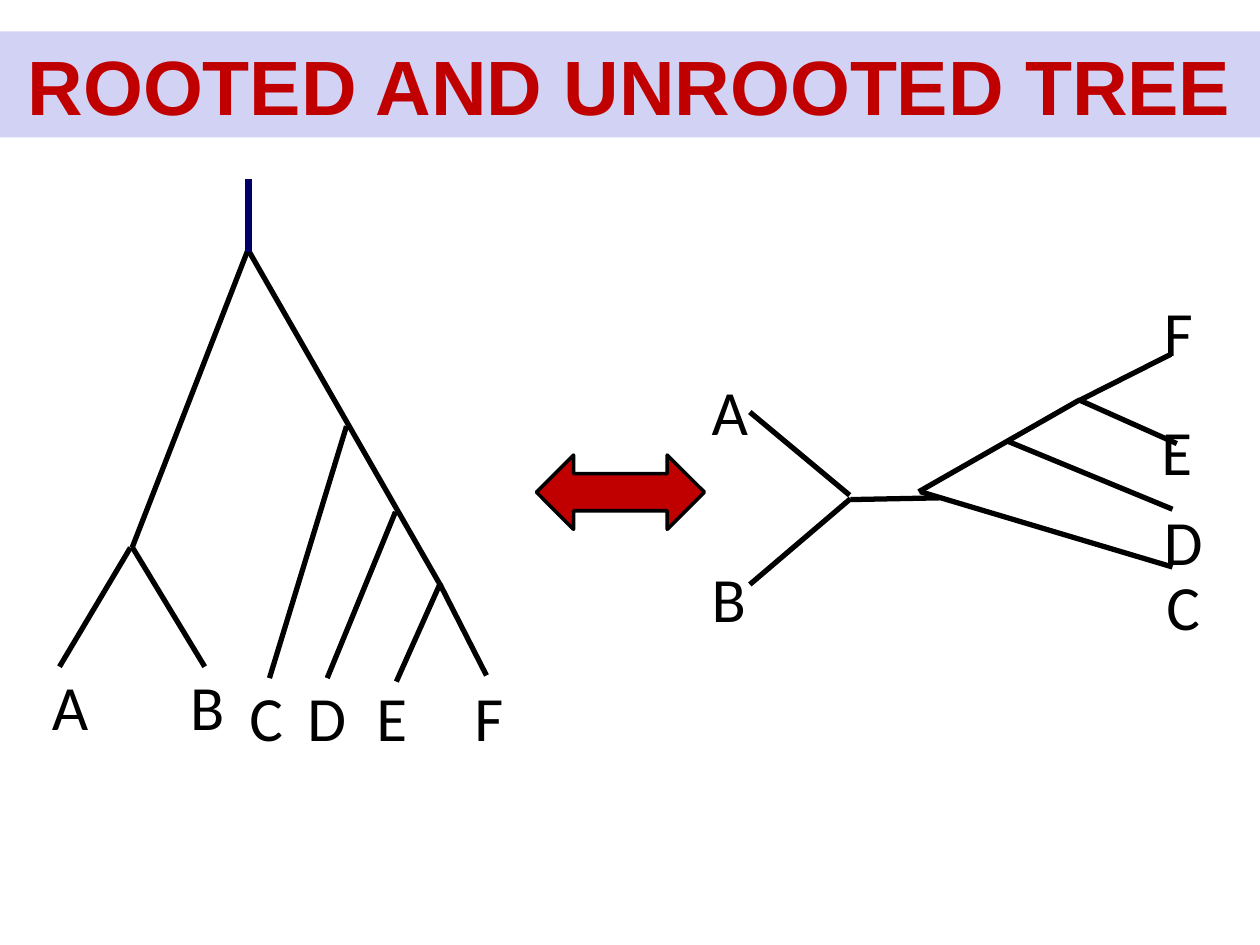
from lxml import etree
from pptx import Presentation
from pptx.dml.color import RGBColor
from pptx.enum.shapes import MSO_CONNECTOR, MSO_SHAPE
from pptx.enum.text import MSO_ANCHOR, PP_ALIGN
from pptx.oxml.ns import qn
from pptx.util import Pt

STRAIGHT = MSO_CONNECTOR.STRAIGHT
RECTANGLE = MSO_SHAPE.RECTANGLE
DOUBLE_ARROW = MSO_SHAPE.LEFT_RIGHT_ARROW
CENTER = PP_ALIGN.CENTER
MIDDLE = MSO_ANCHOR.MIDDLE

BLACK = RGBColor(0x00, 0x00, 0x00)
RED = RGBColor(0xC0, 0x00, 0x00)
LAVENDER = RGBColor(0xD2, 0xD2, 0xF4)
NAVY = RGBColor(0x00, 0x00, 0x66)

TITLE_FORMAT = {"name": "Arial", "size": Pt(44), "bold": True}
TAXON_FORMAT = {"name": "Calibri", "size": Pt(36), "bold": False}


def add_branch(start, end, color=BLACK, width=3):
    branch = slide.shapes.add_connector(STRAIGHT, *map(Pt, start + end))
    branch.line.color.rgb = color
    branch.line.width = Pt(width)
    etree.SubElement(branch._element.spPr, qn("a:effectLst"))


def write(paragraph, text, color, font_format):
    run = paragraph.add_run()
    run.text = text
    run.font.color.rgb = color
    for attribute, value in font_format.items():
        setattr(run.font, attribute, value)


prs = Presentation()
prs.slide_width, prs.slide_height = Pt(720), Pt(540)
slide = prs.slides.add_slide(prs.slide_layouts[6])

# Branches of the rooted tree, then of the unrooted tree
rooted_branches = [
    ((34, 381), (74.5, 313)),
    ((75.5, 312.5), (117, 381)),
    ((142, 142), (75.5, 313)),
    ((142.5, 144), (252, 335)),
    ((198, 243.5), (154, 387.5)),
    ((226, 292.5), (187, 387.5)),
    ((251.5, 333.5), (226.5, 389.5)),
    ((251.5, 334), (278, 386)),
]
unrooted_branches = [
    ((428.5, 235.5), (485.5, 283)),
    ((486, 285), (428.5, 334)),
    ((486, 285.5), (537, 284.5)),
    ((525, 281), (617, 228.5)),
    ((526, 281), (670, 324)),
    ((575.5, 252), (670, 291)),
    ((616.5, 229), (669, 202.5)),
    ((616.5, 228.5), (672.5, 253.5)),
]
for start, end in rooted_branches + unrooted_branches:
    add_branch(start, end)

# Taxon labels at the leaves of both trees
label_widths = {"A": 32.5, "B": 31.5, "C": 31, "D": 34, "E": 29.5, "F": 29}
rooted_labels = [
    ("A", 22.5, 378), ("B", 101.5, 378), ("C", 135.5, 384),
    ("D", 168.5, 384), ("E", 208, 384), ("F", 264, 384),
]
unrooted_labels = [
    ("A", 399.5, 209.5), ("B", 399.5, 316), ("C", 659.5, 321),
    ("D", 658, 283.5), ("E", 656.5, 232), ("F", 658, 164),
]
for taxon, left, top in rooted_labels + unrooted_labels:
    label = slide.shapes.add_textbox(
        Pt(left), Pt(top), Pt(label_widths[taxon]), Pt(50))
    label.text_frame.word_wrap = False
    write(label.text_frame.paragraphs[0], taxon, BLACK, TAXON_FORMAT)

# Arrow between the two trees
exchange = slide.shapes.add_shape(
    DOUBLE_ARROW, Pt(306.5), Pt(260), Pt(96), Pt(42.5))
exchange.shadow.inherit = False
exchange.fill.solid()
exchange.fill.fore_color.rgb = RED
exchange.line.color.rgb = BLACK
exchange.line.width = Pt(2)

# Title band
title = slide.shapes.add_shape(RECTANGLE, 0, Pt(18), Pt(720), Pt(60.5))
title.shadow.inherit = False
title.fill.solid()
title.fill.fore_color.rgb = LAVENDER
title.line.fill.background()
title.text_frame.word_wrap = True
title.text_frame.vertical_anchor = MIDDLE
heading = title.text_frame.paragraphs[0]
heading.alignment = CENTER
write(heading, "ROOTED AND UNROOTED TREE", RED, TITLE_FORMAT)

# Root
add_branch((142, 102.5), (142, 144), NAVY, 4.5)

prs.save("out.pptx")
